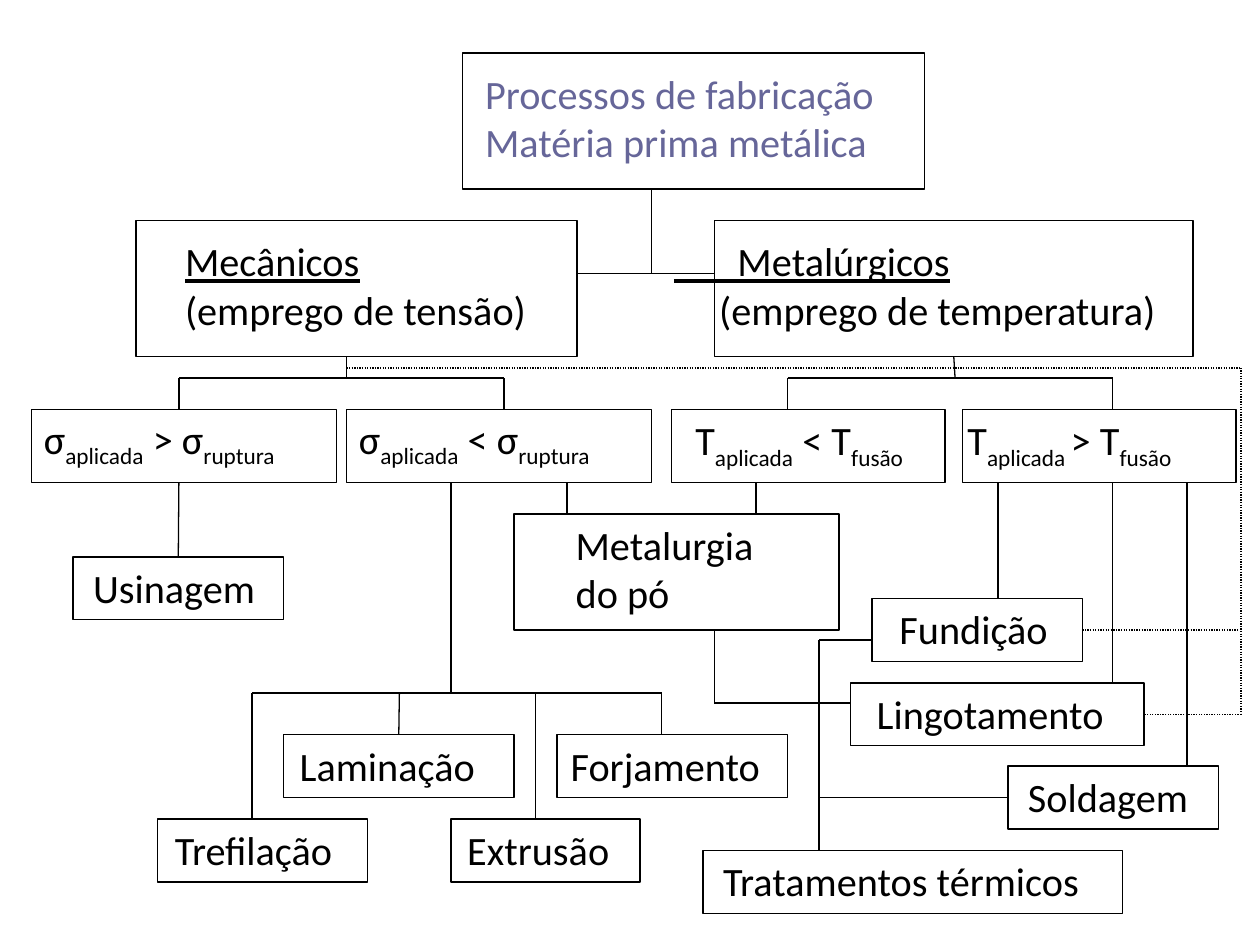
from itertools import pairwise
from pptx import Presentation
from pptx.dml.color import RGBColor
from pptx.enum import dml, shapes, text
from pptx.oxml.ns import qn
from pptx.util import Inches, Pt
from lxml import etree

INK, TITLE = "000000", "666699"
FONT, SIZE, THIN = "Calibri", 23, 0.75
TOL = 0.03  # how near a line end must be to the middle of a side

# Boxes: frame (left, top, width, height), text (left, top, width), lines.
# In each line every second run is a subscript.
HEAD = ((3.67, 0.42, 3.67, 1.08), (3.75, 0.5, 3.5),
        [["Processos de fabricação"], ["Matéria prima metálica"]])
GROUPS = [
    ((1.08, 1.75, 3.5, 1.08), (1.37, 1.83, 2.95),
     [["Mecânicos"], ["(emprego de tensão)"]], 0),
    ((5.67, 1.75, 3.8, 1.08), (5.25, 1.83, 4.6),
     [["       Metalúrgicos"], ["(emprego de temperatura)"]], 0.36),
]
NODES = [
    ((0.25, 3.25, 2.42, 0.58), (0.25, 3.24, 2.39),
     [["σ", "aplicada", " > σ", "ruptura"]]),
    ((2.75, 3.25, 2.42, 0.58), (2.75, 3.24, 2.47),
     [["σ", "aplicada", " < σ", "ruptura"]]),
    ((5.33, 3.25, 2.17, 0.58), (5.42, 3.25, 2.2),
     [["T", "aplicada", " < T", "fusão"]]),
    ((7.64, 3.25, 2.17, 0.58), (7.58, 3.25, 2.17),
     [["T", "aplicada ", "> T", "fusão"]]),
    ((4.08, 4.08, 2.58, 0.92), (4.47, 4.08, 1.81),
     [["Metalurgia"], ["do pó"]]),
]
# Processes: word, left, top, width, text left, text width
STEPS = [
    ("Usinagem", 0.58, 4.42, 1.67, 0.64, 1.55),
    ("Fundição", 6.92, 4.75, 1.67, 7.04, 1.48),
    ("Lingotamento", 6.75, 5.42, 2.33, 6.86, 2.12),
    ("Laminação", 2.25, 5.83, 1.83, 2.28, 1.73),
    ("Forjamento", 4.42, 5.83, 1.83, 4.43, 1.81),
    ("Soldagem", 8, 6.08, 1.67, 8.06, 1.53),
    ("Trefilação", 1.25, 6.5, 1.67, 1.29, 1.6),
    ("Extrusão", 3.58, 6.5, 1.5, 3.61, 1.44),
    ("Tratamentos térmicos", 5.58, 6.75, 3.33, 5.64, 3.21),
]
STEP_H = 0.5

# Lines: each path is a row of points
SOLID = [
    [(5.17, 1.5), (5.17, 2.17)], [(4.58, 2.17), (5.67, 2.17)],
    [(2.75, 2.83), (2.75, 3)], [(7.58, 2.83), (7.58, 3)],
    [(1.42, 3.25), (1.42, 3), (4, 3), (4, 3.25)],
    [(6.25, 3.25), (6.25, 3), (8.83, 3), (8.83, 3.25)],
    [(1.42, 3.83), (1.42, 4.42)], [(3.58, 3.83), (3.58, 5.5)],
    [(4.5, 3.83), (4.5, 4.08)], [(6, 3.83), (6, 4.08)],
    [(7.92, 3.83), (7.92, 4.75)], [(8.83, 3.83), (8.83, 5.42)],
    [(9.42, 3.83), (9.42, 6.08)],
    [(2, 6.5), (2, 5.5), (5.25, 5.5), (5.25, 5.83)],
    [(3.17, 5.5), (3.17, 5.83)], [(4.25, 5.5), (4.25, 6.5)],
    [(5.67, 5), (5.67, 5.58), (6.75, 5.58)],
    [(6.92, 5.08), (6.5, 5.08), (6.5, 6.75)], [(6.5, 6.33), (8, 6.33)],
]
DOTTED = [
    [(2.75, 2.92), (9.85, 2.92), (9.85, 5.67), (9.08, 5.67)],
    [(8.58, 5), (9.82, 5)],
]

prs = Presentation()
prs.slide_width, prs.slide_height = Inches(10), Inches(7.5)
slide = prs.slides.add_slide(prs.slide_layouts[5])
sites = []  # (x, y, box, side number)


def color(code):
    return RGBColor.from_string(code)


def frame(x, y, w, h):
    box = slide.shapes.add_shape(shapes.MSO_SHAPE.RECTANGLE,
                                 *map(Inches, (x, y, w, h)))
    box.shadow.inherit = False
    box.fill.background()
    box.line.color.rgb = color(INK)
    box.line.width = Pt(THIN)
    mids = [(x + w / 2, y), (x, y + h / 2), (x + w / 2, y + h), (x + w, y + h / 2)]
    sites.extend((*mid, box, side) for side, mid in enumerate(mids))


def write(shape, lines, ink=INK, under=False, indent=0):
    """Fill a text shape; under marks line one, indent shifts the others."""
    body = shape.text_frame
    body.auto_size = text.MSO_AUTO_SIZE.SHAPE_TO_FIT_TEXT
    body.vertical_anchor = text.MSO_ANCHOR.TOP
    for row, runs in enumerate(lines):
        para = body.add_paragraph() if row else body.paragraphs[0]
        para.alignment = text.PP_ALIGN.LEFT
        if row and indent:
            para._p.get_or_add_pPr().set("marL", str(Inches(indent)))
        for i, word in enumerate(runs):
            run = para.add_run()
            run.text = word
            font = run.font
            font.name, font.size = FONT, Pt(SIZE)
            font.color.rgb = color(ink)
            if under and row == 0:
                font.underline = True
            if i % 2:
                font._element.set("baseline", "-25000")


def label(spot, lines, **style):
    x, y, w = spot
    high = 0.48 if len(lines) == 1 else 0.87
    area = slide.shapes.add_textbox(*map(Inches, (x, y, w, high)))
    area.text_frame.word_wrap = False
    write(area, lines, **style)


def join(hook, point):
    for x, y, box, side in sites:
        if abs(x - point[0]) < TOL and abs(y - point[1]) < TOL:
            hook(box, side)


def draw(path, dash=None):
    for start, end in pairwise(path):
        line = slide.shapes.add_connector(shapes.MSO_CONNECTOR.STRAIGHT,
                                          *map(Inches, start + end))
        line.line.color.rgb = color(INK)
        line.line.width = Pt(THIN)
        if dash:
            line.line.dash_style = dash
        etree.SubElement(line._element.spPr, qn("a:effectLst"))
        join(line.begin_connect, start)
        join(line.end_connect, end)


# Title
rect, (x, y, w), lines = HEAD
title = slide.shapes.title
title.left, title.top, title.width, title.height = map(Inches, (x, y, w, 0.87))
title.text_frame.word_wrap = True
write(title, lines, ink=TITLE)
frame(*rect)

# Boxes with their labels
for rect, spot, lines, indent in GROUPS:
    frame(*rect)
    label(spot, lines, under=True, indent=indent)
for rect, spot, lines in NODES:
    frame(*rect)
    label(spot, lines)
for word, x, y, w, left, wide in STEPS:
    frame(x, y, w, STEP_H)
    label((left, y, wide), [[word]])

# Lines
for path in SOLID:
    draw(path)
for path in DOTTED:
    draw(path, dml.MSO_LINE.ROUND_DOT)

prs.save("out.pptx")
